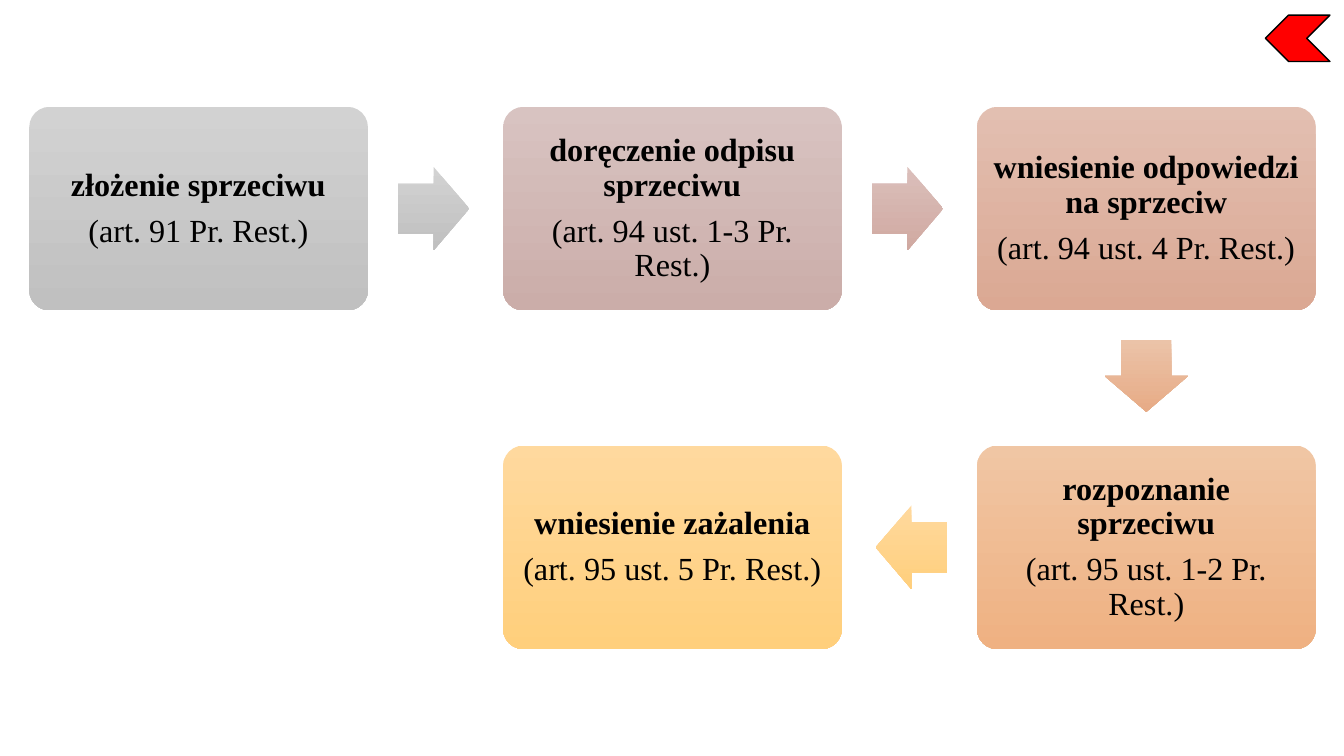
from pptx import Presentation
from pptx.dml.color import RGBColor as RGB
from pptx.enum.shapes import MSO_SHAPE as Kind
from pptx.enum.text import MSO_ANCHOR as Anchor, PP_ALIGN as Align
from pptx.util import Inches, Pt

COLORS = {
    "gray": ("D2D2D2", "C0C0C0"),
    "mauve": ("D8C3C1", "CBADA9"),
    "rose": ("DBBFBB", "D0A9A1"),
    "clay": ("E2BFB1", "DBA893"),
    "peach": ("EBC3A8", "E7AB86"),
    "amber": ("F0C6A4", "EFB182"),
    "gold": ("FFD99E", "FFCF7C"),
    "red": "FF0000",
    "black": "000000",
}
BOX_W, BOX_H = 3.36, 2.02
LEFT, TOP = 0.29, 1.06
STEP_X, STEP_Y = 4.7, 3.36
LONG, WIDE = 0.71, 0.83
SHIFT = 0.02  # arrows sit slightly nearer the box they leave

# column, row, colour, title, article
STEPS = [
    (0, 0, "gray", "złożenie sprzeciwu", "(art. 91 Pr. Rest.)"),
    (1, 0, "mauve", "doręczenie odpisu sprzeciwu", "(art. 94 ust. 1-3 Pr. Rest.)"),
    (2, 0, "clay", "wniesienie odpowiedzi na sprzeciw", "(art. 94 ust. 4 Pr. Rest.)"),
    (2, 1, "amber", "rozpoznanie sprzeciwu", "(art. 95 ust. 1-2 Pr. Rest.)"),
    (1, 1, "gold", "wniesienie zażalenia", "(art. 95 ust. 5 Pr. Rest.)"),
]
ARROWS = ["gray", "rose", "peach", "gold"]
HEADS = {(1, 0): Kind.RIGHT_ARROW, (0, 1): Kind.DOWN_ARROW, (-1, 0): Kind.LEFT_ARROW}


def set_all(item, values):
    for name, value in values.items():
        setattr(item, name, value)


def add_shape(slide, kind, box):
    shape = slide.shapes.add_shape(kind, *map(Inches, box))
    shape.shadow.inherit = False
    return shape


def add_shaded(slide, kind, box, color, *adjust):
    """Add a borderless shape shaded from top to bottom."""
    shape = add_shape(slide, kind, box)
    shape.line.fill.background()
    shape.fill.gradient()
    shape.fill.gradient_angle = 270
    for stop, tint in zip(shape.fill.gradient_stops, COLORS[color]):
        stop.color.rgb = RGB.from_string(tint)
    for i, value in enumerate(adjust):
        shape.adjustments[i] = value
    return shape


def add_step(slide, box, color, title, article):
    frame = add_shaded(slide, Kind.ROUNDED_RECTANGLE, box, color, 0.1).text_frame
    set_all(frame, {
        "word_wrap": True, "vertical_anchor": Anchor.MIDDLE,
        "margin_left": Inches(0.09), "margin_right": Inches(0.09),
        "margin_top": Inches(0.1), "margin_bottom": Inches(0.1),
    })
    for i, text in enumerate((title, article)):
        para = frame.add_paragraph() if i else frame.paragraphs[0]
        set_all(para, {"alignment": Align.CENTER, "line_spacing": 0.9,
                       "space_after": Pt(8)})
        run = para.add_run()
        run.text = text
        set_all(run.font, {"name": "Times New Roman", "size": Pt(23), "bold": i == 0})
        run.font.color.rgb = RGB.from_string(COLORS["black"])


def add_arrow(slide, start, end, color):
    """Add a block arrow in the gap between two grid cells."""
    (col, row), (col2, row2) = start, end
    way = dx, dy = col2 - col, row2 - row
    mid_x = LEFT + BOX_W / 2 + STEP_X * (col + col2) / 2 - SHIFT * dx
    mid_y = TOP + BOX_H / 2 + STEP_Y * (row + row2) / 2 - SHIFT * dy
    w, h = (LONG, WIDE) if dx else (WIDE, LONG)
    add_shaded(slide, HEADS[way], (mid_x - w / 2, mid_y - h / 2, w, h), color, 0.6, 0.5)


def add_back(slide, box):
    mark = add_shape(slide, Kind.CHEVRON, box)
    mark.rotation = 180
    mark.fill.solid()
    mark.fill.fore_color.rgb = RGB.from_string(COLORS["red"])
    mark.line.color.rgb = RGB.from_string(COLORS["black"])
    mark.line.width = Pt(1)


def add_flow(slide):
    for col, row, color, title, article in STEPS:
        box = (LEFT + col * STEP_X, TOP + row * STEP_Y, BOX_W, BOX_H)
        add_step(slide, box, color, title, article)
    for start, end, color in zip(STEPS, STEPS[1:], ARROWS):
        add_arrow(slide, start[:2], end[:2], color)


def main():
    deck = Presentation()
    set_all(deck, {"slide_width": Inches(13.33), "slide_height": Inches(7.5)})
    slide = deck.slides.add_slide(deck.slide_layouts[6])
    add_flow(slide)
    add_back(slide, (12.55, 0.15, 0.64, 0.46))
    deck.save("out.pptx")


if __name__ == "__main__":
    main()
